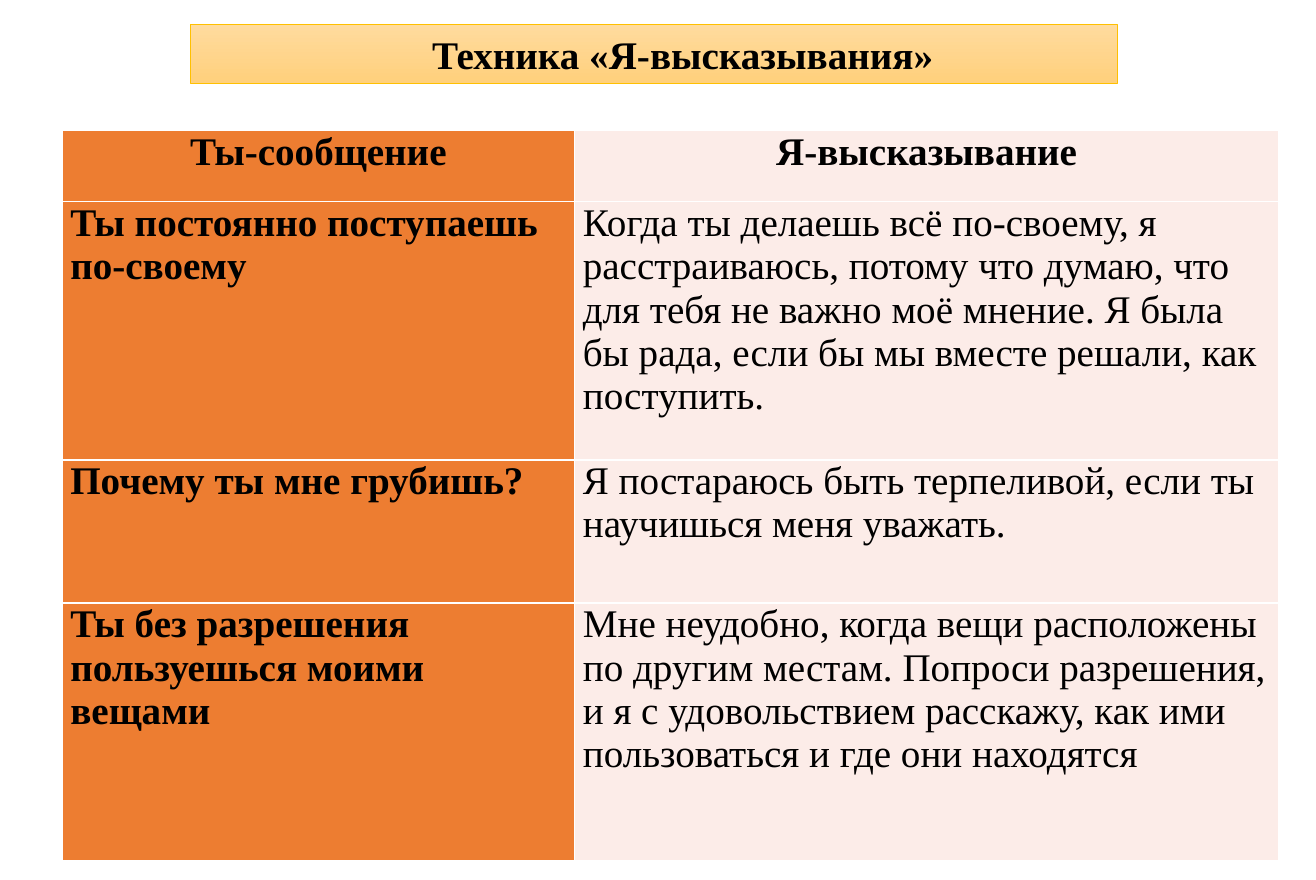
from lxml import etree
from pptx import Presentation
from pptx.dml.color import RGBColor
from pptx.enum.shapes import MSO_SHAPE
from pptx.enum.text import MSO_ANCHOR, PP_ALIGN
from pptx.oxml.ns import qn
from pptx.util import Inches, Pt

RECTANGLE = MSO_SHAPE.RECTANGLE
MIDDLE = MSO_ANCHOR.MIDDLE
CENTER, LEFT = PP_ALIGN.CENTER, PP_ALIGN.LEFT

TITLE = "Техника «Я-высказывания»"
ROWS = [
    ("Ты-сообщение", "Я-высказывание"),
    ("Ты постоянно поступаешь по-своему",
     "Когда ты делаешь всё по-своему, я расстраиваюсь, потому что думаю, "
     "что для тебя не важно моё мнение. Я была бы рада, если бы мы вместе "
     "решали, как поступить."),
    ("Почему ты мне грубишь?",
     "Я постараюсь быть терпеливой, если ты научишься меня уважать."),
    ("Ты без разрешения пользуешься моими вещами",
     "Мне неудобно, когда вещи расположены по другим местам. Попроси "
     "разрешения, и я с удовольствием расскажу, как ими пользоваться и где "
     "они находятся"),
]
COLORS = {
    "text": "000000", "you": "ED7D31", "me": "FCECE8", "border": "FFFFFF",
    "title_top": "FFDB9E", "title_bottom": "FFD07C", "title_line": "FFC000",
}
FONT, TEXT_SIZE = "Times New Roman", 24
SLIDE_WIDTH, SLIDE_HEIGHT = 11.22, 7.5
TITLE_BOX = (1.62, 0.21, 7.91, 0.5)
TITLE_INDENT = 0.49
TABLE_LEFT, TABLE_TOP = 0.53, 1.11
COLUMN_WIDTHS = (4.37, 6)
ROW_HEIGHTS = (0.61, 2.2, 1.22, 2.2)
CELL_MARGIN = 0.07
BORDER_SIDES = ("a:lnL", "a:lnR", "a:lnT", "a:lnB")


def color(name):
    return RGBColor.from_string(COLORS[name])


def format_text(frame, align, bold):
    para = frame.paragraphs[0]
    para.alignment = align
    for span in para.runs:
        span.font.name = FONT
        span.font.size = Pt(TEXT_SIZE)
        span.font.bold = bold
        span.font.color.rgb = color("text")
    return para


def add_borders(cell):
    properties = cell._tc.get_or_add_tcPr()
    for position, side in enumerate(BORDER_SIDES):
        line = etree.Element(qn(side), w=str(Pt(1)))
        fill = etree.SubElement(line, qn("a:solidFill"))
        etree.SubElement(fill, qn("a:srgbClr"), val=COLORS["border"])
        properties.insert(position, line)


def add_title(page):
    box = page.shapes.add_shape(RECTANGLE, *map(Inches, TITLE_BOX))
    box.shadow.inherit = False
    box.fill.gradient()
    box.fill.gradient_angle = 270
    for stop, name in zip(box.fill.gradient_stops, ("title_top", "title_bottom")):
        stop.color.rgb = color(name)
    for position, stop in enumerate(box.fill.gradient_stops):
        stop.position = position
    box.line.color.rgb = color("title_line")
    box.line.width = Pt(0.5)
    frame = box.text_frame
    frame.text = TITLE
    frame.word_wrap = True
    frame.vertical_anchor = MIDDLE
    para = format_text(frame, CENTER, True)
    para._p.get_or_add_pPr().set("indent", str(Inches(TITLE_INDENT)))


def add_comparison(page):
    table = page.shapes.add_table(
        len(ROWS), len(COLUMN_WIDTHS), Inches(TABLE_LEFT), Inches(TABLE_TOP),
        Inches(sum(COLUMN_WIDTHS)), Inches(sum(ROW_HEIGHTS))).table
    table.first_row = table.horz_banding = False
    for column, width in zip(table.columns, COLUMN_WIDTHS):
        column.width = Inches(width)
    for row, height in zip(table.rows, ROW_HEIGHTS):
        row.height = Inches(height)
    for row_index, texts in enumerate(ROWS):
        header = row_index == 0
        for column_index, text in enumerate(texts):
            cell = table.cell(row_index, column_index)
            cell.text_frame.text = text
            cell.margin_left = cell.margin_right = Inches(CELL_MARGIN)
            cell.margin_top = cell.margin_bottom = 0
            cell.fill.solid()
            cell.fill.fore_color.rgb = color(("you", "me")[column_index])
            add_borders(cell)
            format_text(cell.text_frame, CENTER if header else LEFT,
                        header or column_index == 0)


def main():
    deck = Presentation()
    deck.slide_width = Inches(SLIDE_WIDTH)
    deck.slide_height = Inches(SLIDE_HEIGHT)
    page = deck.slides.add_slide(deck.slide_layouts[6])
    add_comparison(page)
    add_title(page)
    deck.save("out.pptx")


if __name__ == "__main__":
    main()
